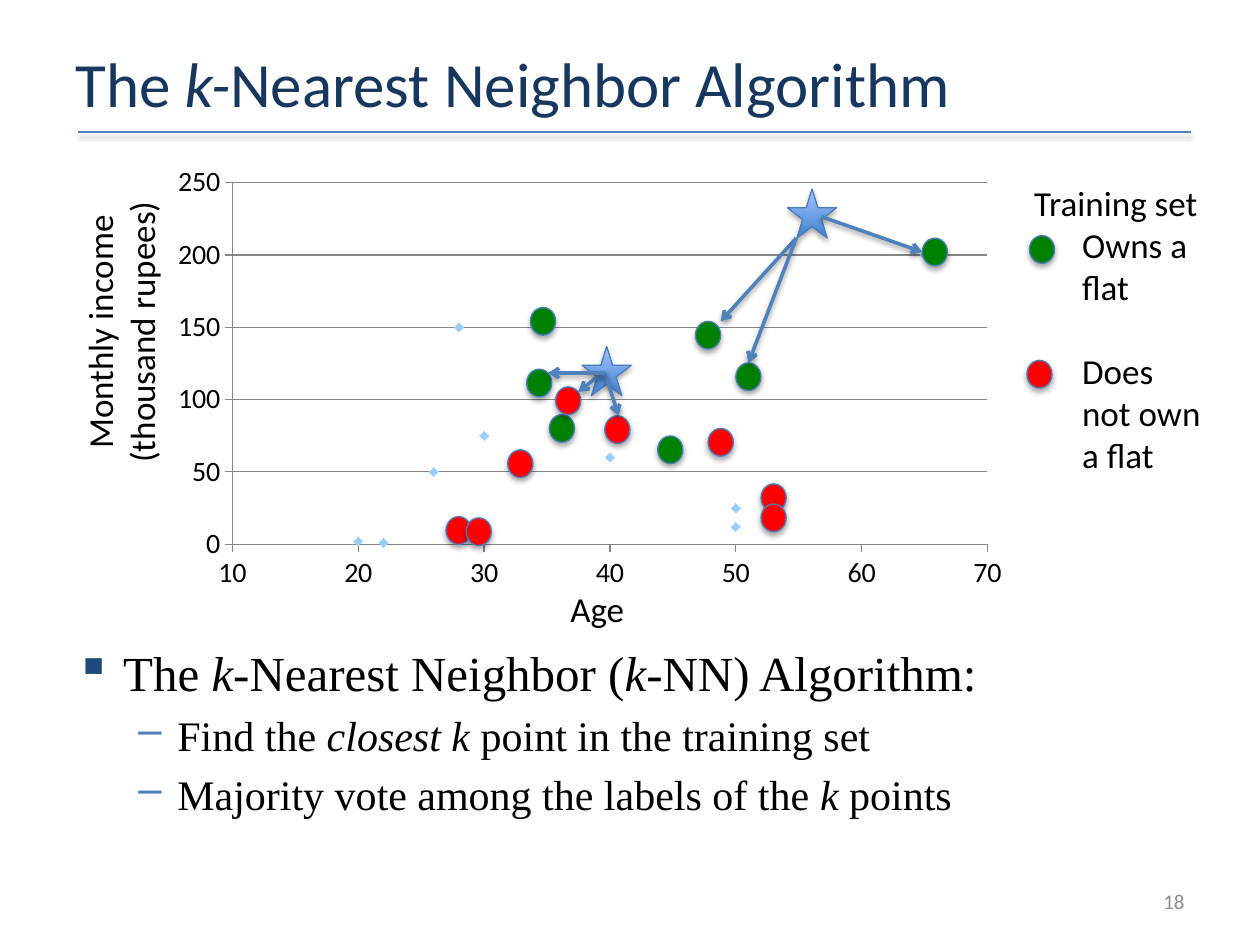
from lxml import etree
from pptx import Presentation, util as u
from pptx.chart.data import XyChartData
from pptx.dml.color import RGBColor
from pptx.enum import chart as ch, shapes, text
from pptx.oxml import parse_xml
from pptx.oxml.ns import nsdecls, qn

PX = 9144  # 100 px to the inch


class Theme:
    sans, serif = "Calibri", "Times New Roman"
    navy, black, grey, grid = "17375E", "000000", "8C8C8C", "868686"
    blue, edge, bullet, marker = "4F81BD", "4B7EBC", "1F497D", "99CCFF"
    owns, lacks = "008000", "FF0000"
    star = ("3F80CE", "A4C4FF")
    title, body, sub, label, tick, small = 36, 28, 24, 20, 16, 12


# Content: asterisks enclose italics, positions are in px
TITLE = "The *k-*Nearest Neighbor Algorithm"
BULLETS = [
    (0, "The *k*-Nearest Neighbor (*k*-NN) Algorithm:"),
    (1, "Find the *closest k *point in the training set"),
    (1, "Majority vote among the labels of the *k *points"),
]
LEVELS = [  # size, indent, hanging, bullet, bullet colour
    (Theme.body, 38, 38, "▪", Theme.bullet),
    (Theme.sub, 81, 31, "–", Theme.blue),
]
POINTS = [(20, 2), (22, 1), (50, 12), (30, 75), (40, 60),
          (50, 25), (28, 150), (26, 50), (40, 60), (65, 200)]
DOTS = {  # the last of each colour is its legend key
    Theme.owns: [(421, 244), (732, 189), (522, 346), (436, 329), (418, 293),
                 (584, 288), (552, 255), (817, 187)],
    Theme.lacks: [(354, 410), (370, 411), (403, 357), (604, 384), (604, 400),
                  (562, 340), (441, 307), (480, 330), (815, 286)],
}
DOT_SIZE, STAR_SIZE = (20, 22), (39, 39)
STARS = [(625, 150), (462, 275)]
ARROWS = [
    ((632, 189), (572, 255)), ((632, 189), (594, 288)), ((652, 172), (732, 200)),
    ((478, 296), (459, 311)), ((480, 296), (491, 330)), ((480, 296), (435, 296)),
]


def px(*values):
    return [u.Emu(round(v * PX)) for v in values]


def rgb(code):
    return RGBColor.from_string(code)


def add_shadow(shape, dist, alpha):
    shape._element.spPr.append(parse_xml(
        f'<a:effectLst {nsdecls("a")}><a:outerShdw blurRad="40000" dist="{dist}" '
        f'dir="5400000" rotWithShape="0"><a:srgbClr val="000000">'
        f'<a:alpha val="{alpha}000"/></a:srgbClr></a:outerShdw></a:effectLst>'))


def add_bullet(p, char, color):
    pPr = p._p.get_or_add_pPr()
    clr = etree.SubElement(pPr, qn("a:buClr"))
    etree.SubElement(clr, qn("a:srgbClr"), val=color)
    etree.SubElement(pPr, qn("a:buChar"), char=char)


def set_indent(p, left, hanging):
    pPr = p._p.get_or_add_pPr()
    pPr.set("marL", str(left * PX))
    pPr.set("indent", str(-hanging * PX))


def add_text(s, box, lines, size=Theme.label, font=Theme.sans, color=Theme.black,
             align=text.PP_ALIGN.LEFT, anchor=text.MSO_ANCHOR.TOP, rotation=0):
    sp = s.shapes.add_textbox(*px(*box))
    sp.rotation = rotation
    tf = sp.text_frame
    tf.word_wrap, tf.vertical_anchor = True, anchor
    for i, line in enumerate(lines):
        p = tf.add_paragraph() if i else tf.paragraphs[0]
        p.alignment = align
        for j, part in enumerate(line.split("*")):
            if not part:
                continue
            r = p.add_run()
            r.text = part
            r.font.size, r.font.name = u.Pt(size), font
            r.font.italic = j % 2 == 1
            r.font.color.rgb = rgb(color)
    return tf.paragraphs


def add_mark(s, kind, at, size, colors):
    sp = s.shapes.add_shape(kind, *px(*at, *size))
    if len(colors) > 1:
        sp.fill.gradient()
        sp.fill.gradient_angle = 90
        for stop, color in zip(sp.fill.gradient_stops, colors):
            stop.color.rgb = rgb(color)
    else:
        sp.fill.solid()
        sp.fill.fore_color.rgb = rgb(colors[0])
    sp.line.color.rgb, sp.line.width = rgb(Theme.edge), u.Pt(0.75)
    add_shadow(sp, 23000, 35)


def add_line(s, start, end, width, arrow=False):
    c = s.shapes.add_connector(shapes.MSO_CONNECTOR.STRAIGHT, *px(*start, *end))
    c.line.color.rgb, c.line.width = rgb(Theme.blue), u.Pt(width)
    if arrow:
        etree.SubElement(c.line._get_or_add_ln(), qn("a:tailEnd"), type="arrow")
    add_shadow(c, 20000, 38)


def add_scatter(s, box):
    data = XyChartData()
    series = data.add_series("Series 1")
    for point in POINTS:
        series.add_data_point(*point)
    chart = s.shapes.add_chart(ch.XL_CHART_TYPE.XY_SCATTER, *px(*box), data).chart
    chart.has_legend = chart.has_title = False
    chart.font.name, chart.font.size = Theme.sans, u.Pt(Theme.tick)
    chart.font.color.rgb = rgb(Theme.black)
    plot = chart.plots[0]
    plot.vary_by_categories = False
    ser = plot.series[0]
    ser.smooth = False
    ser.format.line.fill.background()
    ser.marker.style, ser.marker.size = ch.XL_MARKER_STYLE.DIAMOND, 5
    ser.marker.format.fill.solid()
    ser.marker.format.fill.fore_color.rgb = rgb(Theme.marker)
    ser.marker.format.line.fill.background()
    for axis, low, high, step in ((chart.category_axis, 10, 70, 10),
                                  (chart.value_axis, 0, 250, 50)):
        axis.minimum_scale, axis.maximum_scale, axis.major_unit = low, high, step
        axis.major_tick_mark = ch.XL_TICK_MARK.OUTSIDE
        axis.minor_tick_mark = ch.XL_TICK_MARK.NONE
        axis.has_title = axis.has_major_gridlines = False
        axis.tick_labels.font.size = u.Pt(Theme.tick)
        axis.format.line.color.rgb = rgb(Theme.grid)
    chart.value_axis.has_major_gridlines = True
    chart.value_axis.major_gridlines.format.line.color.rgb = rgb(Theme.grid)
    # Fixed plot area, so that the dots laid over it stay in register
    area = chart._chartSpace.chart.plotArea
    for old in area.findall(qn("c:layout")):
        area.remove(old)
    sizes = "".join(f'<c:{k} val="{v}"/>' for k, v in
                    (("x", 0.08), ("y", 0.06), ("w", 0.88), ("h", 0.82)))
    area.insert(0, parse_xml(
        f'<c:layout {nsdecls("c")}><c:manualLayout><c:layoutTarget val="inner"/>'
        f'<c:xMode val="edge"/><c:yMode val="edge"/>{sizes}</c:manualLayout></c:layout>'))


def main():
    prs = Presentation()
    prs.slide_width, prs.slide_height = px(1000, 750)
    s = prs.slides.add_slide(prs.slide_layouts[6])
    center, middle = text.PP_ALIGN.CENTER, text.MSO_ANCHOR.MIDDLE

    # Heading and page number
    add_line(s, (62, 105), (945, 105), 1)
    add_text(s, (50, 30, 900, 71), [TITLE], size=Theme.title, color=Theme.navy,
             anchor=middle)
    add_text(s, (717, 695, 233, 40), ["18"], size=Theme.small, color=Theme.grey,
             align=text.PP_ALIGN.RIGHT, anchor=middle)

    # Chart with axis titles
    add_scatter(s, (130, 124, 681, 350))
    add_text(s, (-38, 225, 267, 77), ["Monthly income (thousand rupees)"],
             align=center, rotation=270)
    add_text(s, (425, 461, 98, 44), ["Age"], align=center)

    # Legend text
    legend = add_text(s, (811, 139, 152, 246),
                      ["Training set", "Owns a flat", "Does not own a flat"])
    for p in legend[1:]:
        set_indent(p, 38, 0)
    legend[2].space_before = u.Pt(24)

    # Training points, queries and their neighbours
    for color, places in DOTS.items():
        for at in places:
            add_mark(s, shapes.MSO_SHAPE.OVAL, at, DOT_SIZE, [color])
    for at in STARS:
        add_mark(s, shapes.MSO_SHAPE.STAR_5_POINT, at, STAR_SIZE, Theme.star)
    for start, end in ARROWS:
        add_line(s, start, end, 2, arrow=True)

    # Explanation
    body = add_text(s, (50, 505, 900, 165), [line for _, line in BULLETS],
                    font=Theme.serif)
    for p, (level, _) in zip(body, BULLETS):
        size, left, hanging, char, color = LEVELS[level]
        p.level, p.space_before = level, u.Pt(size * 0.2)
        set_indent(p, left, hanging)
        add_bullet(p, char, color)
        for r in p.runs:
            r.font.size = u.Pt(size)

    prs.save("out.pptx")


if __name__ == "__main__":
    main()
